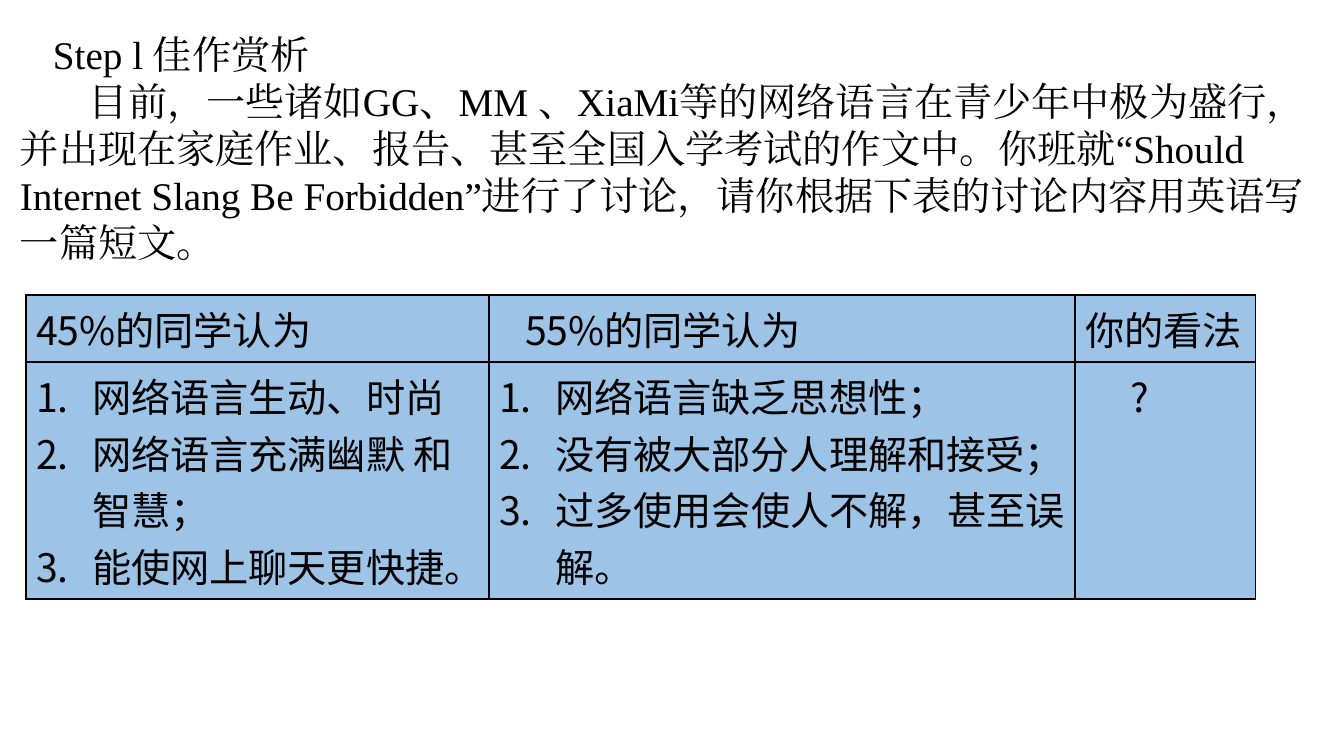
from pptx import Presentation
from pptx.dml.color import RGBColor
from pptx.enum.text import MSO_ANCHOR, PP_ALIGN
from pptx.oxml import parse_xml
from pptx.oxml.ns import nsdecls
from pptx.util import Pt

PX = 9144000 / 1008
COLORS = {"ink": "000000", "cell": "9DC3E6"}
SANS, SERIF = "Noto Sans CJK SC", "Times New Roman"


def px(n):
    return round(n * PX)


class SlideBuilder:
    """Holds the text style and the current slide."""

    size = Pt(28)
    hanging = 56

    def __init__(self, s):
        self.s = s

    def paragraph(self, tf, i, text, font, first=0, numbered=False, **formats):
        p = tf.paragraphs[0] if i == 0 else tf.add_paragraph()
        for name, value in formats.items():
            setattr(p, name, value)
        pPr = p._p.get_or_add_pPr()
        left = self.hanging if numbered else 0
        pPr.set("marL", str(px(left)))
        pPr.set("indent", str(px(-left if numbered else first)))
        if numbered:
            pPr.append(parse_xml(f'<a:buAutoNum {nsdecls("a")} type="arabicPeriod"/>'))
        r = p.add_run()
        r.text = text
        for name, value in {"size": self.size, "name": font, "bold": False}.items():
            setattr(r.font, name, value)
        r.font.color.rgb = RGBColor.from_string(COLORS["ink"])
        rPr = r._r.get_or_add_rPr()
        rPr.set("lang", "zh-CN")
        rPr.append(parse_xml(f'<a:ea {nsdecls("a")} typeface="{font}"/>'))

    def text(self, x, y, w, h, paragraphs):
        tf = self.s.shapes.add_textbox(*map(px, (x, y, w, h))).text_frame
        tf.word_wrap = True
        tf.vertical_anchor = MSO_ANCHOR.MIDDLE
        for i, (text, first) in enumerate(paragraphs):
            self.paragraph(tf, i, text, SERIF, first, line_spacing=Pt(33.6))

    def cell(self, cell, lines, first=0, numbered=False, align=PP_ALIGN.JUSTIFY):
        tcPr = cell._tc.get_or_add_tcPr()
        for side in "LRTB":
            tcPr.append(parse_xml(
                f'<a:ln{side} {nsdecls("a")} w="{Pt(1)}"><a:solidFill>'
                f'<a:srgbClr val="{COLORS["ink"]}"/></a:solidFill></a:ln{side}>'))
        cell.fill.solid()
        cell.fill.fore_color.rgb = RGBColor.from_string(COLORS["cell"])
        for i, line in enumerate(lines):
            self.paragraph(cell.text_frame, i, line, SANS, first, numbered, alignment=align)

    def table(self, x, y, widths, heights, rows):
        frame = self.s.shapes.add_table(len(heights), len(widths), px(x), px(y),
                                        px(sum(widths)), px(sum(heights)))
        table = frame.table
        table.first_row = table.horz_banding = False
        for column, width in zip(table.columns, widths):
            column.width = px(width)
        for row, height, contents in zip(table.rows, heights, rows):
            row.height = px(height)
            for cell, content in zip(row.cells, contents):
                self.cell(cell, **content)


def main():
    prs = Presentation()
    prs.slide_width, prs.slide_height = px(1344), px(756)
    slide = SlideBuilder(prs.slides.add_slide(prs.slide_layouts[6]))

    # Opinions of the class
    slide.table(26, 295, (463, 586, 181), (67, 237), [
        [{"lines": ["45%的同学认为"]},
         {"lines": ["55%的同学认为"], "first": 26},
         {"lines": ["你的看法"]}],
        [{"lines": ["网络语言生动、时尚", "网络语言充满幽默 和智慧；", "能使网上聊天更快捷。"],
          "numbered": True, "align": PP_ALIGN.LEFT},
         {"lines": ["网络语言缺乏思想性；", "没有被大部分人理解和接受；",
                    "过多使用会使人不解，甚至误解。"], "numbered": True},
         {"lines": ["?"], "first": 45}],
    ])

    # Heading and writing task
    slide.text(10, 24, 1320, 248, [
        ("Step l 佳作赏析", 33),
        ("目前，一些诸如GG、MM 、XiaMi等的网络语言在青少年中极为盛行，"
         "并出现在家庭作业、报告、甚至全国入学考试的作文中。"
         "你班就“Should Internet Slang Be Forbidden”进行了讨论，"
         "请你根据下表的讨论内容用英语写一篇短文。", 69),
    ])

    prs.save("out.pptx")


if __name__ == "__main__":
    main()
